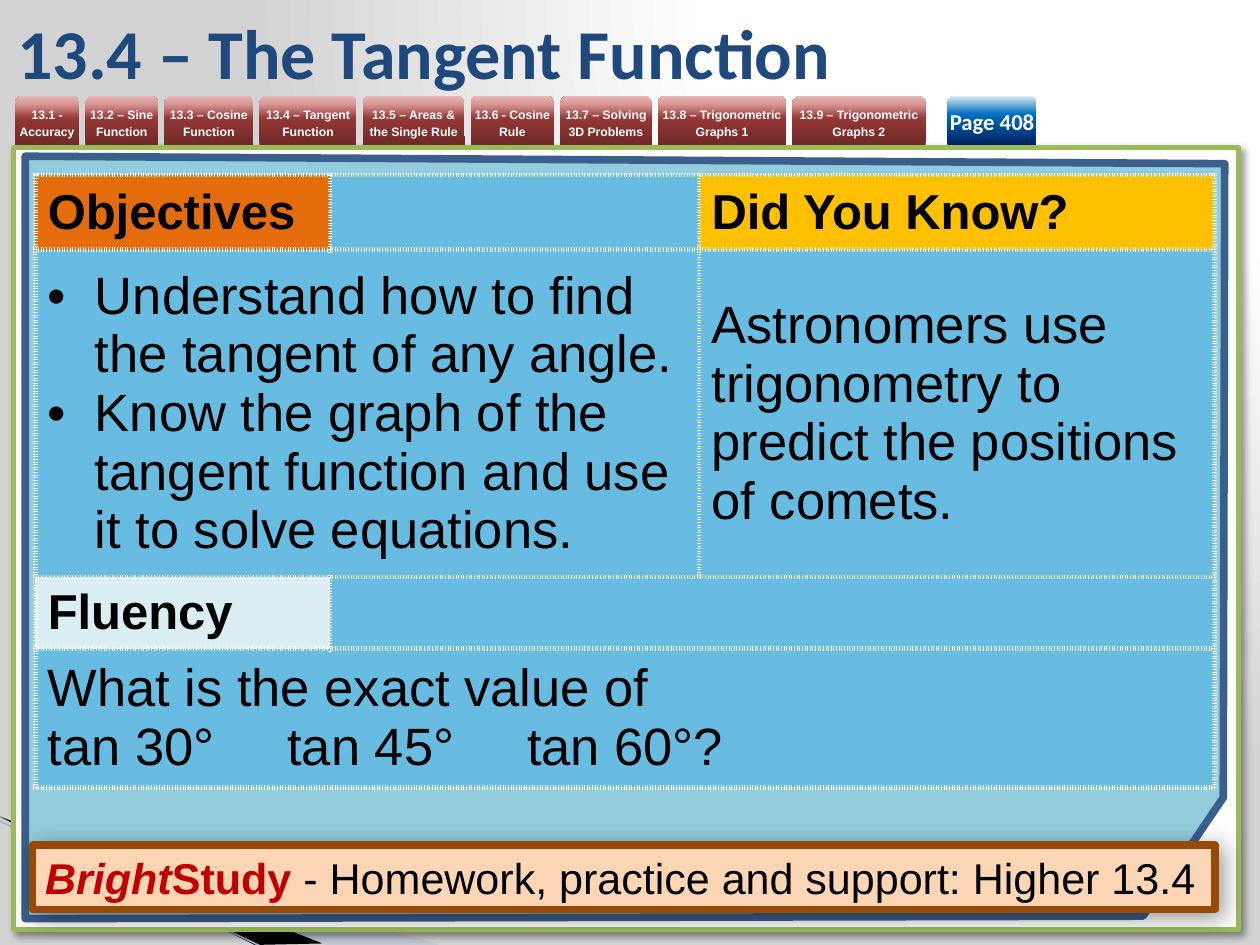
import pptx
import pptx.dml.color
import pptx.enum.dml
import pptx.enum.shapes
import pptx.enum.text
import pptx.oxml
import pptx.oxml.ns
import pptx.util

Cm, Pt = pptx.util.Cm, pptx.util.Pt
SHAPE = pptx.enum.shapes.MSO_SHAPE
MIDDLE = pptx.enum.text.MSO_ANCHOR.MIDDLE
CENTER = pptx.enum.text.PP_ALIGN.CENTER
NS = pptx.oxml.ns.nsdecls("a")
qn = pptx.oxml.ns.qn

COLORS = {
    "white": "FFFFFF", "black": "000000", "title": "1F497D", "grey": "D3D3D3",
    "swoosh": "A7B9DB", "swoosh_edge": "9EB3D6", "frame": "9BBB59",
    "panel": "93CDDD", "panel_edge": "3A5F8C", "cell": "68BCE1",
    "objectives": "E46C0A", "fact": "FFC000", "fluency": "DBEEF4",
    "footer": "FCD5B5", "footer_edge": "984807", "brand": "C00000",
}
TAB_STOPS = [(0, "6F2927"), (54, "953735"), (83, "D99694"), (100, "E6B9B8")]
PAGE_STOPS = [(0, "002060"), (63, "0070C0"), (100, "DBEEF4")]
PAPER_STOPS = [(0, COLORS["white"]), (40, COLORS["white"]), (100, COLORS["grey"])]
UPWARD = '<a:lin %s ang="16200000" scaled="0"/>' % NS
RADIAL = ('<a:path %s path="circle"><a:fillToRect l="65000" t="0" r="0" b="98000"/>'
          '</a:path>' % NS)
LESSONS = [
    ("13.1 - Accuracy", 1.3), ("13.2 – Sine Function", 1.47),
    ("13.3 – Cosine Function", 1.8), ("13.4 – Tangent Function", 1.96),
    ("13.5 – Areas & the Single Rule", 2.06), ("13.6 - Cosine Rule", 1.68),
    ("13.7 – Solving 3D Problems", 1.85), ("13.8 – Trigonometric Graphs 1", 2.59),
    ("13.9 – Trigonometric Graphs 2", 2.69),
]
TAB_TOP, TAB_HEIGHT, TAB_GAP = 1.93, 0.99, 0.12


def rgb(name):
    """Return the named colour."""
    return pptx.dml.color.RGBColor.from_string(COLORS[name])


def write(paragraph, text, size=30, font="Arial", color="black", bold=False,
          italic=False, align=None, spacing=None):
    """Add a formatted run to a paragraph."""
    run = paragraph.add_run()
    run.text = text
    run.font.size, run.font.name = Pt(size), font
    run.font.bold, run.font.italic = bold, italic
    run.font.color.rgb = rgb(color)
    if align is not None:
        paragraph.alignment = align
    if spacing:
        paragraph.line_spacing = Pt(spacing)


def apply_gradient(owner, fill, stops, direction):
    """Give a fill its gradient stops and direction."""
    fill.gradient()
    gradient = next(owner.iter(qn("a:gradFill")))
    for child in list(gradient):
        gradient.remove(child)
    marks = "".join('<a:gs pos="%d"><a:srgbClr val="%s"/></a:gs>' % (place * 1000, value)
                    for place, value in stops)
    gradient.append(pptx.oxml.parse_xml("<a:gsLst %s>%s</a:gsLst>" % (NS, marks)))
    gradient.append(pptx.oxml.parse_xml(direction))


def paint(shape, fill, edge=None, width=0):
    """Set a solid fill and an optional outline."""
    shape.shadow.inherit = False
    shape.fill.solid()
    shape.fill.fore_color.rgb = rgb(fill)
    if edge:
        shape.line.color.rgb = rgb(edge)
        shape.line.width = Pt(width)
    else:
        shape.line.fill.background()


def add_polygon(slide, points, fill, edge=None, width=0, opacity=100):
    """Draw a closed outline through points in centimetres."""
    start, *others = [(Cm(x), Cm(y)) for x, y in points]
    builder = slide.shapes.build_freeform(*start)
    builder.add_line_segments(others, close=True)
    polygon = builder.convert_to_shape()
    paint(polygon, fill, edge, width)
    if opacity < 100:
        tint = next(polygon.element.iter(qn("a:srgbClr")))
        tint.append(pptx.oxml.parse_xml('<a:alpha %s val="%d"/>' % (NS, opacity * 1000)))


def add_swoosh_line(slide, start, end):
    """Draw the thin line along the corner swoosh."""
    edge = slide.shapes.add_connector(pptx.enum.shapes.MSO_CONNECTOR.STRAIGHT,
                                      *map(Cm, start + end))
    edge.line.color.rgb = rgb("swoosh_edge")
    edge.line.width = Pt(0.95)
    edge.element.spPr.append(pptx.oxml.parse_xml("<a:effectLst %s/>" % NS))


def add_card(slide, box, fill, edge, width, blur):
    """Add an outlined rectangle with a soft shadow."""
    card = slide.shapes.add_shape(SHAPE.RECTANGLE, *map(Cm, box))
    paint(card, fill, edge, width)
    effects = card.element.spPr.find(qn("a:effectLst"))
    effects.append(pptx.oxml.parse_xml(
        '<a:outerShdw %s blurRad="%d" dist="%d" dir="2700000" algn="tl" rotWithShape="0">'
        '<a:srgbClr val="%s"><a:alpha val="40000"/></a:srgbClr></a:outerShdw>'
        % (NS, Pt(blur), Pt(3), COLORS["black"])))
    return card


def add_tab(slide, left, width, stops, label, **style):
    """Add a round-topped navigation tab."""
    tab = slide.shapes.add_shape(SHAPE.ROUND_2_SAME_RECTANGLE,
                                 Cm(left), Cm(TAB_TOP), Cm(width), Cm(TAB_HEIGHT))
    tab.shadow.inherit = False
    tab.line.fill.background()
    apply_gradient(tab.element, tab.fill, stops, UPWARD)
    frame = tab.text_frame
    frame.margin_left = frame.margin_right = frame.margin_top = frame.margin_bottom = 0
    frame.word_wrap, frame.vertical_anchor = True, MIDDLE
    write(frame.paragraphs[0], label, color="white", bold=True, align=CENTER, **style)


def style_cell(cell, fill):
    """Fill a cell and give it dotted white borders."""
    cell.fill.solid()
    cell.fill.fore_color.rgb = rgb(fill)
    cell.vertical_anchor = MIDDLE
    properties = cell._tc.get_or_add_tcPr()
    for index, side in enumerate("LRTB"):
        properties.insert(index, pptx.oxml.parse_xml(
            '<a:ln%s %s w="%d"><a:solidFill><a:srgbClr val="%s"/></a:solidFill>'
            '<a:prstDash val="sysDot"/></a:ln%s>'
            % (side, NS, Pt(3), COLORS["white"], side)))


def add_bullet(paragraph):
    """Give a paragraph a hanging bullet."""
    properties = paragraph._p.get_or_add_pPr()
    properties.set("marL", str(Cm(0.95)))
    properties.set("indent", str(-Cm(0.95)))
    properties.append(pptx.oxml.parse_xml('<a:buFont %s typeface="Arial"/>' % NS))
    properties.append(pptx.oxml.parse_xml('<a:buChar %s char="•"/>' % NS))


def add_tab_stops(paragraph, places):
    """Set left tab stops given in centimetres."""
    stops = "".join('<a:tab pos="%d" algn="l"/>' % Cm(place) for place in places)
    paragraph._p.get_or_add_pPr().append(
        pptx.oxml.parse_xml("<a:tabLst %s>%s</a:tabLst>" % (NS, stops)))


def add_lesson_table(slide):
    """Add the table of objectives, fact and fluency questions."""
    widths, heights = (5.94, 7.44, 10.39), (1.5, 6.3, 1.35, 2.62)
    table = slide.shapes.add_table(len(heights), len(widths), Cm(0.71), Cm(3.53),
                                   Cm(sum(widths)), Cm(sum(heights))).table
    table.first_row = table.horz_banding = False
    for column, width in zip(table.columns, widths):
        column.width = Cm(width)
    for row, height in zip(table.rows, heights):
        row.height = Cm(height)
    headings = {(0, 0): ("Objectives", "objectives"), (0, 2): ("Did You Know?", "fact"),
                (2, 0): ("Fluency", "fluency")}
    for row in range(len(heights)):
        for column in range(len(widths)):
            heading, fill = headings.get((row, column), ("", "cell"))
            cell = table.cell(row, column)
            style_cell(cell, fill)
            if heading:
                write(cell.text_frame.paragraphs[0], heading, size=28, bold=True)
    for first, last in (((1, 0), (1, 1)), ((2, 1), (2, 2)), ((3, 0), (3, 2))):
        table.cell(*first).merge(table.cell(*last))

    objectives = table.cell(1, 0).text_frame
    first, second = objectives.paragraphs[0], objectives.add_paragraph()
    for paragraph, aim in (
            (first, "Understand how to find the tangent of any angle."),
            (second, "Know the graph of the tangent function and use it to solve equations.")):
        add_bullet(paragraph)
        write(paragraph, aim)
    write(table.cell(1, 2).text_frame.paragraphs[0],
          "Astronomers use trigonometry to predict the positions of comets.")
    question = table.cell(3, 0).text_frame
    write(question.paragraphs[0], "What is the exact value of")
    angles = question.add_paragraph()
    add_tab_stops(angles, (4.83, 9.66))
    write(angles, "tan 30°\ttan 45°\ttan 60°?")


def main():
    """Build the lesson slide."""
    deck = pptx.Presentation()
    deck.slide_width, deck.slide_height = Cm(25.4), Cm(19.05)
    slide = deck.slides.add_slide(deck.slide_layouts[6])
    apply_gradient(slide.element, slide.background.fill, PAPER_STOPS, RADIAL)

    add_polygon(slide, [(-0.03, 16.51), (8.86, 19.05), (6.58, 19.05), (-0.03, 16.48)],
                "swoosh", opacity=40)
    add_polygon(slide, [(0, 16.46), (6.5, 19.02), (5.13, 19.05), (0.03, 16.48)], "black")
    add_swoosh_line(slide, (-0.03, 16.54), (5.31, 19.1))
    add_card(slide, (0.28, 2.97, 24.69, 15.77), "white", "frame", 3, blur=4)
    add_polygon(slide, [(0.51, 3.15), (24.69, 3.3), (24.66, 16.08), (23.04, 18.47),
                        (0.51, 18.52)], "panel", "panel_edge", 4.33)

    left = 0.3
    for lesson, width in LESSONS:
        add_tab(slide, left, width, TAB_STOPS, lesson, size=7, spacing=10)
        left += width + TAB_GAP
    title = slide.shapes.add_textbox(Cm(0.1), Cm(0.13), Cm(21), Cm(1.8)).text_frame
    title.word_wrap, title.vertical_anchor = True, MIDDLE
    write(title.paragraphs[0], "13.4 – The Tangent Function", size=40, font="Calibri",
          color="title", bold=True)
    add_tab(slide, 19.1, 1.8, PAGE_STOPS, "Page 408", size=13, font="Calibri")
    add_lesson_table(slide)

    homework = add_card(slide, (0.66, 17.04, 23.83, 1.3), "footer", "footer_edge", 4.33,
                        blur=13).text_frame
    homework.word_wrap, homework.vertical_anchor = True, MIDDLE
    support = homework.paragraphs[0]
    support.alignment = pptx.enum.text.PP_ALIGN.LEFT
    write(support, "Bright", size=24.6, color="brand", bold=True, italic=True)
    write(support, "Study ", size=24.6, color="brand", bold=True)
    write(support, "- Homework, practice and support: Higher 13.4", size=24.6)
    deck.save("out.pptx")


if __name__ == "__main__":
    main()
